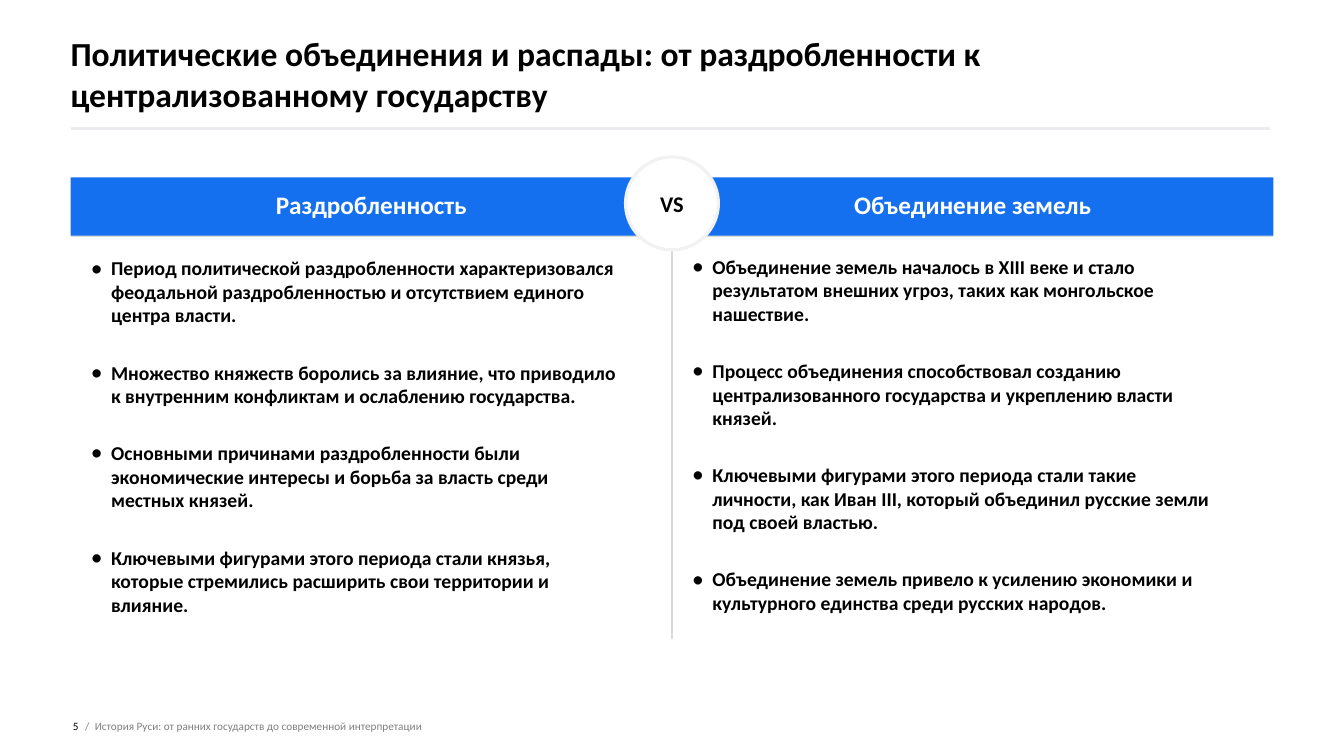
from dataclasses import dataclass

from lxml import etree
from pptx import Presentation
from pptx.dml.color import RGBColor
from pptx.enum import shapes, text
from pptx.oxml import ns
from pptx.util import Cm, Pt

TITLE = "Политические объединения и распады: от раздробленности к централизованному государству"
VERSUS = "VS"
SIDES = [
    ("Раздробленность", [
        "Период политической раздробленности характеризовался феодальной раздробленностью и отсутствием единого центра власти.",
        "Множество княжеств боролись за влияние, что приводило к внутренним конфликтам и ослаблению государства.",
        "Основными причинами раздробленности были экономические интересы и борьба за власть среди местных князей.",
        "Ключевыми фигурами этого периода стали князья, которые стремились расширить свои территории и влияние.",
    ]),
    ("Объединение земель", [
        "Объединение земель началось в XIII веке и стало результатом внешних угроз, таких как монгольское нашествие.",
        "Процесс объединения способствовал созданию централизованного государства и укреплению власти князей.",
        "Ключевыми фигурами этого периода стали такие личности, как Иван III, который объединил русские земли под своей властью.",
        "Объединение земель привело к усилению экономики и культурного единства среди русских народов.",
    ]),
]
PAGE_NUMBER = "5"
FOOTER = "История Руси: от ранних государств до современной интерпретации"


@dataclass(frozen=True)
class Theme:
    font: str = "Calibri"
    ink: str = "000000"
    paper: str = "FFFFFF"
    accent: str = "1570EF"
    muted: str = "808080"
    divider: str = "D9D9D9"
    title_rule: str = "EAECF0"
    ring: str = "F2F2F2"
    title_size: int = 24
    heading_size: int = 18
    versus_size: int = 16
    body_size: int = 14
    footer_size: int = 8


THEME = Theme()
SLIDE_W, SLIDE_H = 33.87, 19.05
LEFT = 1.78
CENTER = SLIDE_W / 2
BAR_W = CENTER - LEFT
BAR_TOP, BAR_H = 4.47, 1.47
RULE_Y = 5.95
CIRCLE = 2.34
BODY_INSET, BODY_W, BODY_H = 0.51, 13.39, 9.28
BODY_TOPS = (6.46, 6.42)
INDENT = 0.51
FOOTER_TOP, FOOTER_H = 17.53, 1.52

ALIGN = text.PP_ALIGN
ANCHOR = text.MSO_ANCHOR


def write(shape, paragraphs, size, color, bold=False, align=ALIGN.LEFT, anchor=ANCHOR.MIDDLE):
    """Fill a shape with uniformly formatted paragraphs and no insets."""
    frame = shape.text_frame
    frame.text = "\n".join(paragraphs)
    frame.word_wrap = True
    frame.vertical_anchor = anchor
    frame.margin_left = frame.margin_right = frame.margin_top = frame.margin_bottom = 0
    for paragraph in frame.paragraphs:
        paragraph.alignment = align
        for run in paragraph.runs:
            run.font.name = THEME.font
            run.font.size = Pt(size)
            run.font.bold = bold
            run.font.color.rgb = RGBColor.from_string(color)
    return frame


def add_text(slide, box, paragraphs, *style, **options):
    textbox = slide.shapes.add_textbox(*map(Cm, box))
    return write(textbox, paragraphs, *style, **options)


def add_solid(slide, kind, box, fill):
    """Add a flat, unoutlined shape."""
    shape = slide.shapes.add_shape(kind, *map(Cm, box))
    shape.shadow.inherit = False
    shape.fill.solid()
    shape.fill.fore_color.rgb = RGBColor.from_string(fill)
    shape.line.fill.background()
    return shape


def add_line(slide, ends, color, width):
    line = slide.shapes.add_connector(shapes.MSO_CONNECTOR.STRAIGHT, *map(Cm, ends))
    line.line.color.rgb = RGBColor.from_string(color)
    line.line.width = Pt(width)
    etree.SubElement(line._element.spPr, ns.qn("a:effectLst"))


def add_bullet(paragraph):
    paragraph.space_after = Pt(24)
    properties = paragraph._p.get_or_add_pPr()
    properties.set("marL", str(Cm(INDENT)))
    properties.set("indent", str(-Cm(INDENT)))
    etree.SubElement(properties, ns.qn("a:buSzPct"), val="120000")
    etree.SubElement(properties, ns.qn("a:buFont"), typeface=THEME.font)
    etree.SubElement(properties, ns.qn("a:buChar"), char="•")


def add_side(slide, left, body_top, heading, points):
    bar = add_solid(slide, shapes.MSO_SHAPE.RECTANGLE, (left, BAR_TOP, BAR_W, BAR_H), THEME.accent)
    label = write(bar, [heading], THEME.heading_size, THEME.paper, bold=True, align=ALIGN.CENTER)
    label.paragraphs[0].line_spacing = 0.9
    body = add_text(slide, (left + BODY_INSET, body_top, BODY_W, BODY_H), points,
                    THEME.body_size, THEME.ink, bold=True, anchor=ANCHOR.TOP)
    for paragraph in body.paragraphs:
        add_bullet(paragraph)


def add_versus(slide):
    top = BAR_TOP + (BAR_H - CIRCLE) / 2 - 0.08
    circle = add_solid(slide, shapes.MSO_SHAPE.OVAL,
                       (CENTER - CIRCLE / 2, top, CIRCLE, CIRCLE), THEME.paper)
    circle.line.color.rgb = RGBColor.from_string(THEME.ring)
    circle.line.width = Pt(2.25)
    write(circle, [VERSUS], THEME.versus_size, THEME.ink, bold=True, align=ALIGN.CENTER)


def add_footer(slide):
    for left, width, words, color, align in (
        (1.19, 0.79, PAGE_NUMBER, THEME.ink, ALIGN.RIGHT),
        (2.08, 0.3, " /", THEME.muted, ALIGN.LEFT),
        (2.39, 21.87, FOOTER, THEME.muted, ALIGN.LEFT),
    ):
        add_text(slide, (left, FOOTER_TOP, width, FOOTER_H), [words],
                 THEME.footer_size, color, align=align)


def main():
    deck = Presentation()
    deck.slide_width, deck.slide_height = Cm(SLIDE_W), Cm(SLIDE_H)
    slide = deck.slides.add_slide(deck.slide_layouts[6])

    add_text(slide, (LEFT, 0, 30.33, 2.87), [TITLE], THEME.title_size, THEME.ink,
             bold=True, anchor=ANCHOR.BOTTOM)
    add_line(slide, (LEFT, 3.24, 32, 3.24), THEME.title_rule, 2)
    add_line(slide, (CENTER, RULE_Y, CENTER, 16.1), THEME.divider, 1)
    add_line(slide, (LEFT, RULE_Y, LEFT + 2 * BAR_W, RULE_Y), THEME.divider, 1)
    for index, (heading, points) in enumerate(SIDES):
        add_side(slide, LEFT + index * BAR_W, BODY_TOPS[index], heading, points)
    add_versus(slide)
    add_footer(slide)
    deck.save("out.pptx")


if __name__ == "__main__":
    main()
